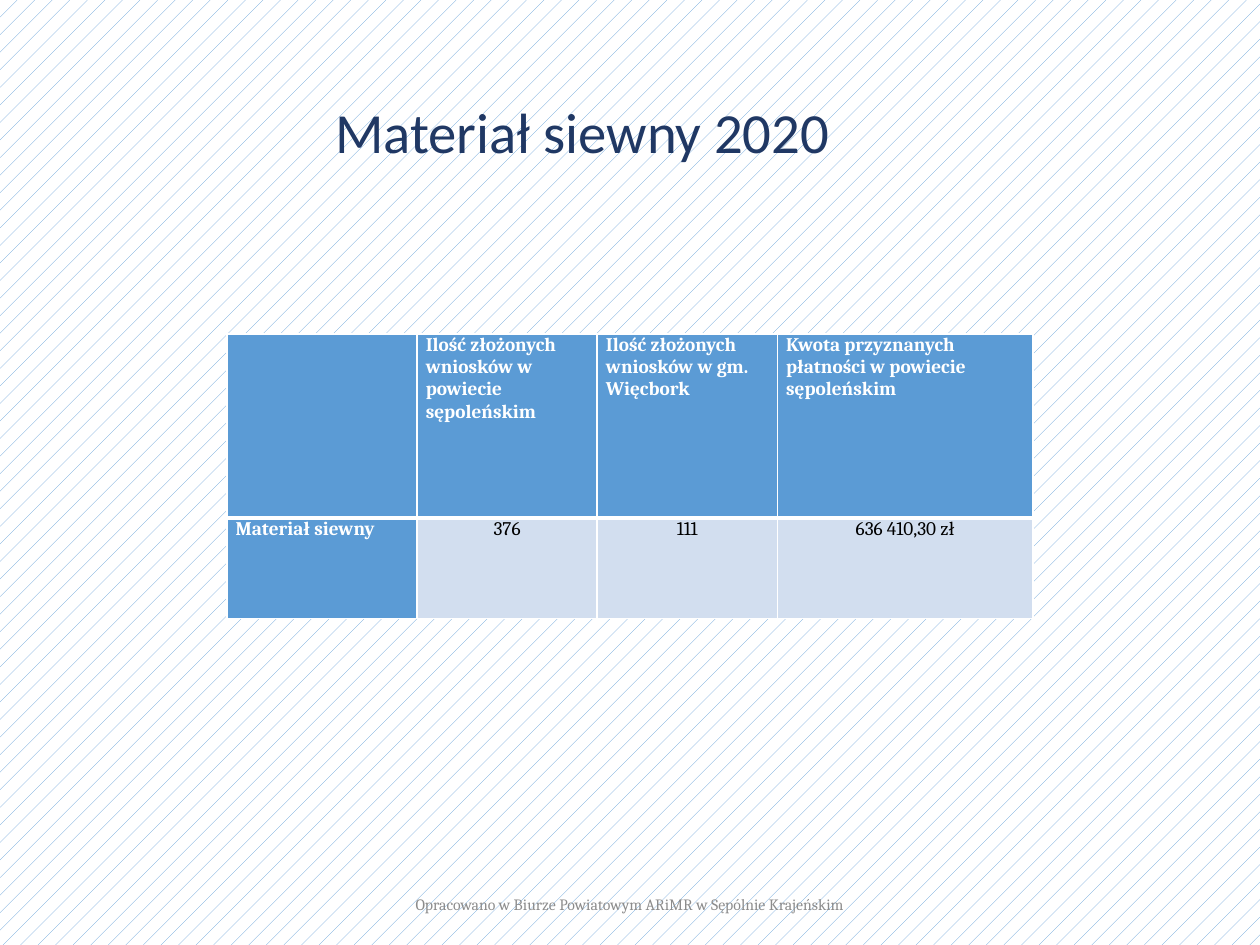
from dataclasses import dataclass

from lxml.etree import SubElement
from pptx import Presentation
from pptx.dml.color import RGBColor
from pptx.enum.dml import MSO_PATTERN
from pptx.enum.text import MSO_ANCHOR, MSO_AUTO_SIZE, PP_ALIGN
from pptx.oxml.ns import qn
from pptx.util import Inches, Pt

BLUE, PALE, WHITE = "5B9BD5", "D2DEEF", "FFFFFF"
COLS = [1.51, 1.43, 1.43, 2.03]
ROWS = [1.46, 0.8]


@dataclass
class CellStyle:
    fill: str
    color: str
    bold: bool
    align: PP_ALIGN


HEAD = CellStyle(BLUE, WHITE, True, PP_ALIGN.LEFT)
VALUE = CellStyle(PALE, "000000", False, PP_ALIGN.CENTER)
TEXTS = [
    ["", "Ilość złożonych wniosków w powiecie sępoleńskim",
     "Ilość złożonych wniosków w gm. Więcbork",
     "Kwota przyznanych płatności w powiecie sępoleńskim"],
    ["Materiał siewny", "376", "111", "636 410,30 zł"],
]


def rgb(value: str) -> RGBColor:
    """Turn a hex string into a colour."""
    return RGBColor.from_string(value)


def add_run(p, text: str, size: float, font: str, color: str, bold: bool = False) -> None:
    """Add one formatted run to a paragraph."""
    r = p.add_run()
    r.text = text
    r.font.size, r.font.name, r.font.bold = Pt(size), font, bold
    r.font.color.rgb = rgb(color)


def add_borders(cell, widths: dict[str, float]) -> None:
    """Draw white borders of the given widths ahead of the cell fill."""
    tc_pr = cell._tc.get_or_add_tcPr()
    for side, width in widths.items():
        ln = SubElement(tc_pr, qn(f"a:ln{side}"), w=str(Pt(width)))
        SubElement(SubElement(ln, qn("a:solidFill")), qn("a:srgbClr"), val=WHITE)


def fill_cell(cell, text: str, style: CellStyle, bottom: float) -> None:
    """Format one table cell and write its text."""
    add_borders(cell, {"L": 1, "R": 1, "T": 1, "B": bottom})
    cell.fill.solid()
    cell.fill.fore_color.rgb = rgb(style.fill)
    if text:
        cell.margin_left = cell.margin_right = Inches(0.07)
        cell.margin_top = cell.margin_bottom = 0
        p = cell.text_frame.paragraphs[0]
        p.alignment = style.align
        add_run(p, text, 11, "Cambria", style.color, style.bold)


def add_seed_table(s) -> None:
    """Add the table of applications and payments."""
    table = s.shapes.add_table(len(ROWS), len(COLS), Inches(1.8), Inches(2.65),
                               Inches(sum(COLS)), Inches(sum(ROWS))).table
    for column, width in zip(table.columns, COLS):
        column.width = Inches(width)
    for i, (row, height) in enumerate(zip(table.rows, ROWS)):
        row.height = Inches(height)
        for j, cell in enumerate(row.cells):
            style = VALUE if i and j else HEAD
            fill_cell(cell, TEXTS[i][j], style, 1 if i else 3)


def add_title(s) -> None:
    """Place and write the slide title."""
    sp = s.shapes.title
    sp.left, sp.top, sp.width, sp.height = map(Inches, (2.56, 0.84, 4.65, 1.01))
    tf = sp.text_frame
    tf.auto_size, tf.vertical_anchor = MSO_AUTO_SIZE.NONE, MSO_ANCHOR.MIDDLE
    p = tf.paragraphs[0]
    p.alignment, p.line_spacing = PP_ALIGN.LEFT, 0.9
    p.font.size = Pt(32.4)
    add_run(p, "Materiał siewny 2020", 32.4, "Calibri", "203864")
    p.add_line_break()


def add_footer(s) -> None:
    """Add the centred credit line at the bottom."""
    tf = s.shapes.add_textbox(*map(Inches, (3.02, 6.98, 3.95, 0.4))).text_frame
    tf.word_wrap, tf.vertical_anchor = True, MSO_ANCHOR.MIDDLE
    p = tf.paragraphs[0]
    p.alignment = PP_ALIGN.CENTER
    add_run(p, "Opracowano w Biurze Powiatowym ARiMR w Sępólnie Krajeńskim",
            9, "Cambria", "8C8C8C")


def main() -> None:
    """Build and save the slide."""
    prs = Presentation()
    prs.slide_width, prs.slide_height = Inches(10), Inches(7.5)
    s = prs.slides.add_slide(prs.slide_layouts[5])
    fill = s.background.fill
    fill.patterned()
    fill.pattern = MSO_PATTERN.PERCENT_5
    fill.fore_color.rgb, fill.back_color.rgb = rgb(BLUE), rgb(WHITE)
    add_title(s)
    add_seed_table(s)
    add_footer(s)
    prs.save("out.pptx")


if __name__ == "__main__":
    main()
